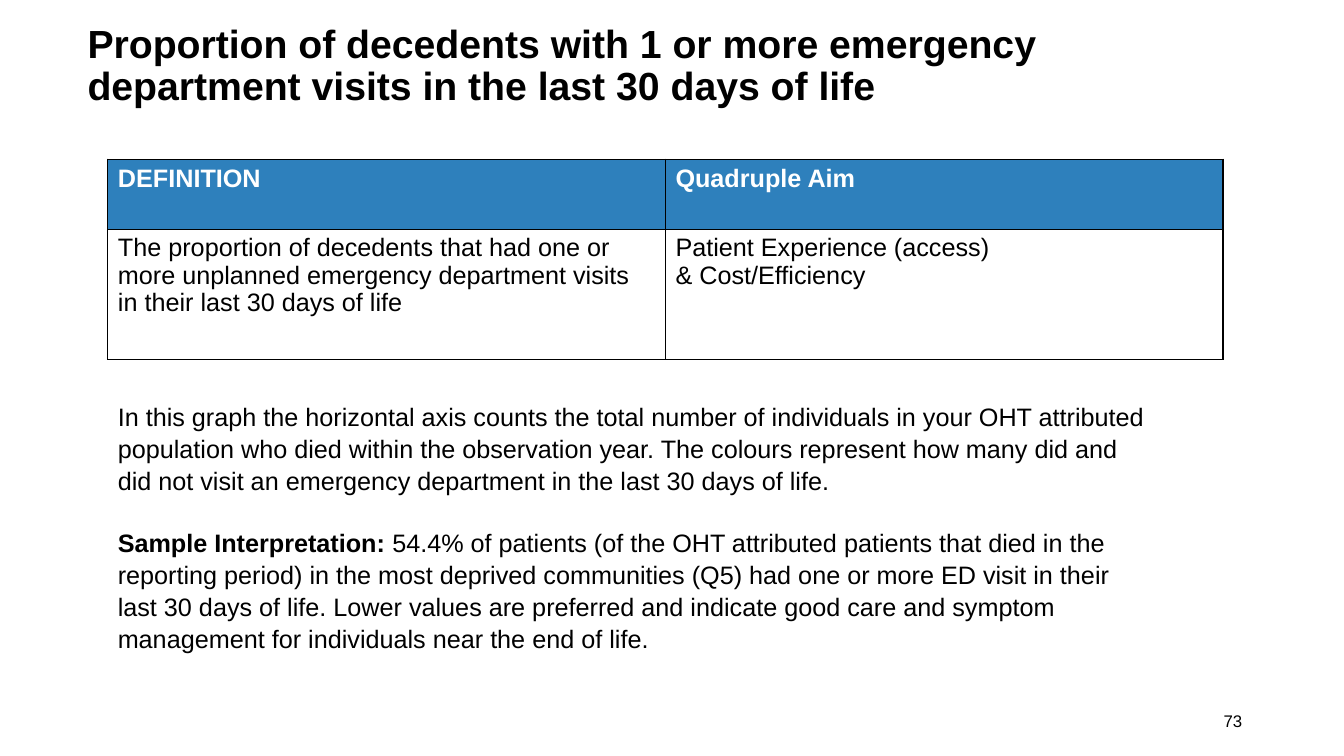
import pptx
import pptx.util
import pptx.dml.color
import pptx.enum.text
import pptx.oxml
import pptx.oxml.ns
from lxml import etree

PX = 9144
BLACK = pptx.dml.color.RGBColor(0, 0, 0)
WHITE = pptx.dml.color.RGBColor(255, 255, 255)
BLUE = pptx.dml.color.RGBColor(0x2E, 0x80, 0xBC)
ALIGN = pptx.enum.text.PP_ALIGN
ANCHOR = pptx.enum.text.MSO_ANCHOR

TITLE = "Proportion of decedents with 1 or more emergency department visits in the last 30 days of life"
HEADINGS = ["DEFINITION", "Quadruple Aim"]
DETAILS = [
    ["The proportion of decedents that had one or more unplanned emergency department visits in their last 30 days of life"],
    ["Patient Experience (access)", "& Cost/Efficiency"],
]
EXPLANATION = [
    [("In this graph the horizontal axis counts the total number of individuals in your OHT attributed population "
      "who died within the observation year. The colours represent how many did and did not visit an emergency "
      "department in the last 30 days of life.", False)],
    [("Sample Interpretation: ", True),
     ("54.4% of patients (of the OHT attributed patients that died in the reporting period) in the most deprived "
      "communities (Q5) had one or more ED visit in their last 30 days of life. Lower values are preferred and "
      "indicate good care and symptom management for individuals near the end of life.", False)],
]


def emu(*lengths):
    """Turn px lengths into EMU."""
    return [pptx.util.Emu(length * PX) for length in lengths]


def write(frame, paragraphs, size, color=BLACK, align=ALIGN.LEFT, spacing=None, gap=0):
    """Fill a text frame with paragraphs of (text, bold) runs."""
    for index, runs in enumerate(paragraphs):
        para = frame.add_paragraph() if index else frame.paragraphs[0]
        para.alignment = align
        if spacing:
            para.line_spacing = spacing
        if index and gap:
            para.space_before = pptx.util.Pt(gap)
        for text, bold in runs:
            span = para.add_run()
            span.text = text
            span.font.name = "Arial"
            span.font.size = pptx.util.Pt(size)
            span.font.bold = bold
            span.font.color.rgb = color


def add_text(page, box, paragraphs, size, anchor=ANCHOR.TOP, **style):
    """Place a wrapped text box."""
    frame = page.shapes.add_textbox(*emu(*box)).text_frame
    frame.word_wrap = True
    frame.vertical_anchor = anchor
    write(frame, paragraphs, size, **style)


def outline(cell):
    """Draw black borders on all sides of a cell."""
    properties = cell._tc.get_or_add_tcPr()
    for position, side in enumerate(("lnL", "lnR", "lnT", "lnB")):
        line = etree.Element(pptx.oxml.ns.qn("a:" + side), w=str(pptx.util.Pt(1)))
        fill = etree.SubElement(line, pptx.oxml.ns.qn("a:solidFill"))
        etree.SubElement(fill, pptx.oxml.ns.qn("a:srgbClr"), val=str(BLACK))
        properties.insert(position, line)


def add_definition_table(page, box, header_height):
    """Place the definition table with a blue header row."""
    left, top, width, height = box
    table = page.shapes.add_table(2, 2, *emu(*box)).table
    for row, length in zip(table.rows, emu(header_height, height - header_height)):
        row.height = length
    for column, (heading, details) in enumerate(zip(HEADINGS, DETAILS)):
        table.columns[column].width = emu(width // 2)[0]
        header, body = table.cell(0, column), table.cell(1, column)
        header.fill.solid()
        header.fill.fore_color.rgb = BLUE
        body.fill.background()
        write(header.text_frame, [[(heading, True)]], 18, WHITE)
        write(body.text_frame, [[(text, False)] for text in details], 18, spacing=0.97)
        outline(header)
        outline(body)


def add_indicator_slide(deck):
    """Build the indicator definition slide."""
    page = deck.slides.add_slide(deck.slide_layouts[6])
    add_text(page, (942, 695, 300, 40), [[("73", False)]], 12, ANCHOR.MIDDLE, align=ALIGN.RIGHT)
    add_text(page, (77, 24, 1180, 84), [[(TITLE, True)]], 28, ANCHOR.MIDDLE, spacing=0.9)
    add_definition_table(page, (107, 158, 1106, 199), 70)
    add_text(page, (107, 392, 1043, 252), EXPLANATION, 18, spacing=1.05, gap=22)


def main():
    """Create and save the deck."""
    deck = pptx.Presentation()
    deck.slide_width, deck.slide_height = emu(1333, 750)
    add_indicator_slide(deck)
    deck.save("out.pptx")


if __name__ == "__main__":
    main()
